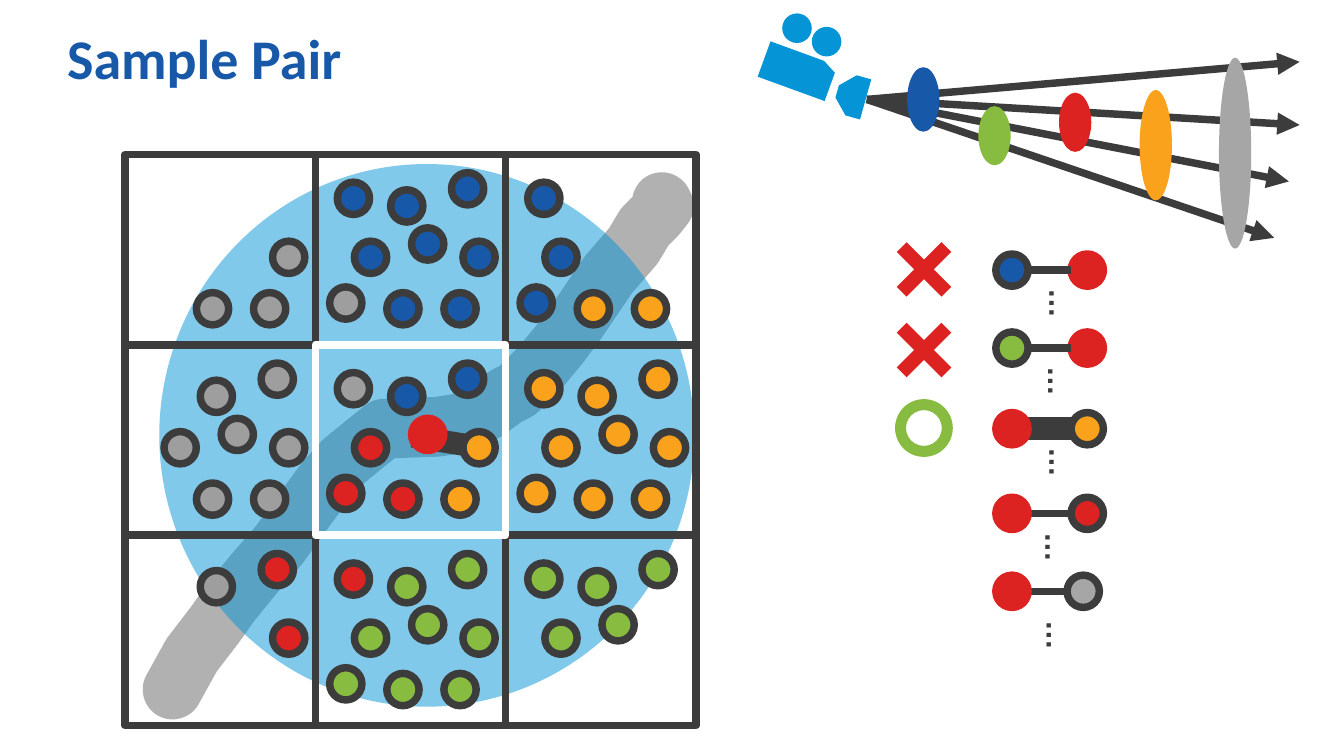
import dataclasses
import pptx
import pptx.dml.color
import pptx.enum.shapes
import pptx.enum.text
import pptx.oxml
import pptx.oxml.ns
import pptx.util

MSO = pptx.enum.shapes.MSO_SHAPE
COLUMN = pptx.util.Inches(0.1)


@dataclasses.dataclass
class Box:
    """A region measured in columns and rows, 100 columns across the slide."""
    x: float
    y: float
    w: float
    h: float

    def inner(self, x, y, w, h):
        """Return a box offset from this one's top left."""
        return Box(self.x + x, self.y + y, w, h)

    def emu(self):
        """Return left, top, width and height as EMU."""
        return [round(v * COLUMN) for v in (self.x, self.y, self.w, self.h)]


class Theme:
    """Colours, line widths and type styles."""
    ink, sky, white, trail, lens = "3C3C3C", "0595D6", "FFFFFF", "B1B1B1", "A6A6A6"
    blue, grey, green, orange, red = "1858A8", "9E9E9E", "87BC40", "FAA21B", "DD2222"
    dots = dict(b=blue, g=grey, n=green, o=orange, r=red, R=red, l=lens)
    thin, bar, brush = 4, 12, 32
    dot = 2.4
    title = dict(name="Calibri", size=pptx.util.Pt(30), bold=True)
    more = dict(name="Arial", size=pptx.util.Pt(16), bold=True)


def rgb(value):
    """Turn a hex string into a colour."""
    return pptx.dml.color.RGBColor.from_string(value)


def child(parent, tag, **attrs):
    """Append a DrawingML element."""
    el = pptx.oxml.parse_xml(f"<a:{tag} {pptx.oxml.ns.nsdecls('a')}/>")
    for k, v in attrs.items():
        el.set(k, v)
    parent.append(el)


def paint(sp, fill=None, line=None, width=Theme.thin):
    """Set fill and outline, leaving out what is not given."""
    sp.shadow.inherit = False
    if fill:
        sp.fill.solid()
        sp.fill.fore_color.rgb = rgb(fill)
    else:
        sp.fill.background()
    if line:
        sp.line.color.rgb = rgb(line)
        sp.line.width = pptx.util.Pt(width)
    else:
        sp.line.fill.background()
    return sp


def shape(s, kind, box, fill=None, line=None, rot=0, adj=()):
    """Add a painted preset shape."""
    sp = s.shapes.add_shape(kind, *box.emu())
    sp.rotation = rot
    for i, v in enumerate(adj):
        sp.adjustments[i] = v
    return paint(sp, fill, line)


def dot(s, cx, cy, key):
    """Add one sample centred on a point; R is the target sample."""
    d = Theme.dot
    edge = Theme.red if key == "R" else Theme.ink
    shape(s, MSO.OVAL, Box(cx - d / 2, cy - d / 2, d, d), Theme.dots[key], edge)


def line(s, x1, y1, x2, y2, width=Theme.thin, arrow=False):
    """Add a straight dark connector."""
    ends = [round(v * COLUMN) for v in (x1, y1, x2, y2)]
    cx = s.shapes.add_connector(pptx.enum.shapes.MSO_CONNECTOR.STRAIGHT, *ends)
    cx.line.color.rgb = rgb(Theme.ink)
    cx.line.width = pptx.util.Pt(width)
    if arrow:
        child(cx.line._get_or_add_ln(), "tailEnd", type="triangle")
    child(cx._element.spPr, "effectLst")


def text(s, box, words, style, color, vert=None):
    """Add a text box without insets."""
    tf = s.shapes.add_textbox(*box.emu()).text_frame
    frame = dict(margin_left=0, margin_right=0, margin_top=0, margin_bottom=0, word_wrap=True)
    for k, v in frame.items():
        setattr(tf, k, v)
    if vert:
        tf._txBody.bodyPr.set("vert", vert)
        tf.auto_size = pptx.enum.text.MSO_AUTO_SIZE.SHAPE_TO_FIT_TEXT
    p = tf.paragraphs[0]
    p.line_spacing = 0.9
    r = p.add_run()
    r.text = words
    for k, v in style.items():
        setattr(r.font, k, v)
    r.font.color.rgb = rgb(color)


def trail(s, box, cell):
    """Draw the thick camera trail through the grid, in shares of a cell."""
    points = [(0.25, 2.81), (0.35, 2.63), (0.48, 2.46), (0.55, 2.36), (0.68, 2.2),
              (0.81, 2.05), (0.94, 1.87), (1.05, 1.72), (1.15, 1.61), (1.26, 1.52),
              (1.36, 1.44), (1.64, 1.43), (1.77, 1.41), (1.89, 1.35), (2, 1.27),
              (2.06, 1.24), (2.18, 1.12), (2.28, 1), (2.37, 0.88), (2.54, 0.63),
              (2.67, 0.48), (2.73, 0.38), (2.79, 0.32), (2.83, 0.27), (2.82, 0.25)]
    first, *rest = [(round((box.x + x * cell) * COLUMN), round((box.y + y * cell) * COLUMN))
                    for x, y in points]
    fb = s.shapes.build_freeform(*first)
    fb.add_line_segments(rest, close=False)
    sp = paint(fb.convert_to_shape(), line=Theme.trail, width=Theme.brush)
    ln = sp.line._get_or_add_ln()
    ln.set("cap", "rnd")
    child(ln, "round")


def sample_grid(s, box):
    """Draw the three by three cells, their samples and the search circle."""
    spots = [(0.2, 0.23), (0.48, 0.27), (0.29, 0.54), (0.8, 0.18), (0.86, 0.54),
             (0.59, 0.47), (0.16, 0.78), (0.46, 0.81), (0.76, 0.81)]
    rows = [["....g..gg", "bbbbbbgbb", "b.b...boo"],
            [".ggggg.gg", "gbrboRrro", "ooooooooo"],
            [".g.rr....", "rnnnnnnnn", "nnnn.n..."]]
    c = box.w / 3
    trail(s, box, c)
    circle = shape(s, MSO.OVAL, box.inner(0.18 * c, 0.05 * c, 2.81 * c, 2.85 * c), Theme.sky)
    child(circle._element.spPr.find(".//" + pptx.oxml.ns.qn("a:srgbClr")), "alpha", val="50000")
    line(s, box.x + 1.51 * c, box.y + 1.48 * c, box.x + 1.94 * c, box.y + 1.55 * c, Theme.bar)
    for j, row in enumerate(rows):
        for i, keys in enumerate(row):
            cell = box.inner(i * c, j * c, c, c)
            shape(s, MSO.RECTANGLE, cell, line=Theme.ink)
            for (x, y), key in zip(spots, keys):
                if key != ".":
                    dot(s, cell.x + x * c, cell.y + y * c, key)
    shape(s, MSO.RECTANGLE, box.inner(c, c, c, c), line=Theme.white)


def camera_view(s, box):
    """Draw the camera, its rays and the discs they cross."""
    for x, y in [(38.1, 16.7), (40, 3.6), (40, 8.3), (39.2, 12.5)]:
        line(s, box.x + 7.8, box.y + 6.4, box.x + x, box.y + y, arrow=True)
    body = shape(s, MSO.FLOWCHART_CARD, box.inner(0, 2.9, 5.3, 2.8), Theme.sky, rot=20)
    body._element.spPr.xfrm.set("flipH", "1")
    shape(s, MSO.SNIP_2_SAME_RECTANGLE, box.inner(5.1, 5, 3.1, 2.2), Theme.sky,
          rot=285.7, adj=(0.49, 0))
    for x, y in [(1.5, 0), (3.7, 1)]:
        shape(s, MSO.OVAL, box.inner(x, y, 2.2, 2.2), Theme.sky)
    discs = [(10.8, 4, 4.8, "b"), (16.1, 6.9, 4.4, "n"), (28.1, 5.7, 8.2, "o"),
             (34, 3.3, 14.2, "l"), (22.1, 5.9, 4.4, "r")]
    for x, y, h, key in discs:
        shape(s, MSO.OVAL, box.inner(x, y, Theme.dot, h), Theme.dots[key])


def pair_list(s, box):
    """Draw the candidate pairs with their marks."""
    pairs = [(2.4, "bR", 14.5, Theme.thin, (11.1, 3.8)), (8.2, "nR", 14.5, Theme.thin, (11, 9.6)),
             (14.2, "Ro", 14.5, Theme.bar, (11.1, 15.6)), (20.5, "Rr", 14.5, Theme.thin, (10.8, 21.9)),
             (26.3, "Rl", 14.2, Theme.thin, (10.9, 28.5))]
    start, half = 8.9, Theme.dot / 2
    for y, (left, right), x, width, (mx, my) in pairs:
        cy = box.y + y
        dot(s, box.x + x, cy, right)
        line(s, box.x + start + half, cy, box.x + x - half, cy, width)
        dot(s, box.x + start, cy, left)
        text(s, box.inner(mx, my, 2.5, 3.3), "…", Theme.more, Theme.ink, "eaVert")
    for y in (0, 6):
        shape(s, MSO.CROSS, box.inner(0, y, 4.7, 4.7), Theme.red, rot=45, adj=(0.39,))
    shape(s, MSO.DONUT, box.inner(0.2, 12, 4.3, 4.3), Theme.green, adj=(0.19,))


def main():
    """Build and save the slide."""
    prs = pptx.Presentation()
    prs.slide_width, prs.slide_height = 100 * COLUMN, round(56.25 * COLUMN)
    s = prs.slides.add_slide(prs.slide_layouts[6])
    sample_grid(s, Box(9.3, 11.5, 42.5, 42.5))
    text(s, Box(5, 2.3, 90, 9.4), "Sample Pair", Theme.title, Theme.blue)
    camera_view(s, Box(56.7, 1, 40, 17.5))
    pair_list(s, Box(66.4, 17.7, 15.7, 31.8))
    prs.save("out.pptx")


if __name__ == "__main__":
    main()
